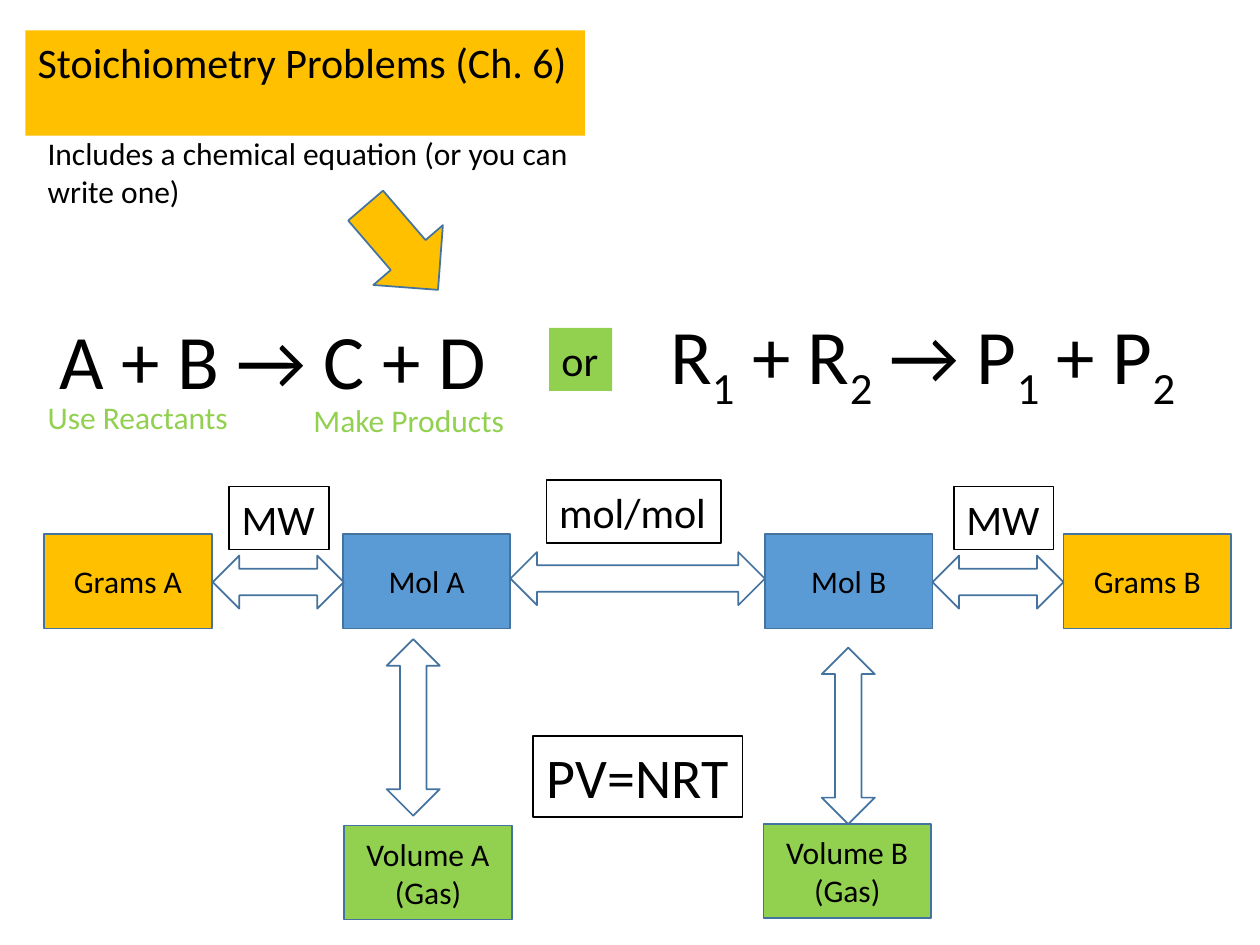
from pptx import Presentation
from pptx import util as u
from pptx.dml.color import RGBColor
from pptx.enum import shapes, text

FONT = "Calibri"
BLACK, WHITE = "000000", "FFFFFF"
GOLD, GREEN, BLUE, OUTLINE = "FFC000", "92D050", "5B9BD5", "43739E"
ARROW = shapes.MSO_SHAPE.LEFT_RIGHT_ARROW


def color(value):
    return RGBColor.from_string(value)


def write(shape, content, size=18, ink=BLACK, align="LEFT", anchor="TOP", wrap=False, grow=True):
    frame = shape.text_frame
    frame.word_wrap = wrap
    frame.auto_size = text.MSO_AUTO_SIZE.SHAPE_TO_FIT_TEXT if grow else text.MSO_AUTO_SIZE.NONE
    frame.vertical_anchor = text.MSO_ANCHOR[anchor]
    frame.margin_left = frame.margin_right = u.Cm(0.25)
    frame.margin_top = frame.margin_bottom = u.Cm(0.13)
    for index, line in enumerate(content.split("\n")):
        paragraph = frame.add_paragraph() if index else frame.paragraphs[0]
        paragraph.alignment = text.PP_ALIGN[align]
        paragraph.line_spacing = 1.0
        for position, part in enumerate(line.split("_")):
            pieces = [(part[:1], True), (part[1:], False)] if position else [(part, False)]
            for piece, lowered in pieces:
                if not piece:
                    continue
                run = paragraph.add_run()
                run.text = piece
                run.font.name = FONT
                run.font.size = u.Pt(size)
                run.font.color.rgb = color(ink)
                if lowered:
                    run.font._element.set("baseline", "-25000")


def add_box(slide, box, kind=shapes.MSO_SHAPE.RECTANGLE, fill=None, line=None, rotation=0):
    shape = slide.shapes.add_shape(kind, *map(u.Cm, box))
    shape.shadow.inherit = False
    shape.rotation = rotation
    if fill:
        shape.fill.solid()
        shape.fill.fore_color.rgb = color(fill)
    else:
        shape.fill.background()
    if line:
        shape.line.color.rgb = color(line)
        shape.line.width = u.Pt(1)
    else:
        shape.line.fill.background()
    return shape


def add_text(slide, box, content, **style):
    write(slide.shapes.add_textbox(*map(u.Cm, box)), content, **style)


def add_title(slide, box, content):
    title = slide.shapes.title
    title.left, title.top, title.width, title.height = map(u.Cm, box)
    title.fill.solid()
    title.fill.fore_color.rgb = color(GOLD)
    write(title, content, size=24)


def add_equations(slide, left, top):
    add_text(slide, (left, top, 11.51, 1.8),
             "Includes a chemical equation (or you can write one)", wrap=True)
    add_box(slide, (left + 6.27, top + 1.5, 2.24, 1.85),
            shapes.MSO_SHAPE.RIGHT_ARROW, GOLD, OUTLINE, 49.3)
    add_text(slide, (left + 0.25, top + 3.61, 9.19, 2.13), "A + B → C + D", size=44)
    add_text(slide, (left + 12.55, top + 3.51, 11.07, 2.13), "R_1 + R_2 → P_1 + P_2", size=44)
    write(add_box(slide, (left + 10.36, top + 4.04, 1.27, 1.27), fill=GREEN), "or", size=24)
    add_text(slide, (left, top + 5.33, 4.19, 1.02), "Use Reactants", ink=GREEN)
    add_text(slide, (left + 5.36, top + 5.38, 4.39, 1.02), "Make Products", ink=GREEN)


def add_conversion_map(slide, left, top):
    nodes = [
        ("Mol A", 6.02, 1.09, BLUE), ("Mol B", 14.53, 1.09, BLUE),
        ("Grams A", 0, 1.09, GOLD), ("Grams B", 20.55, 1.09, GOLD),
        ("Volume A\n(Gas)", 6.05, 6.96, GREEN), ("Volume B\n(Gas)", 14.5, 6.93, GREEN),
    ]
    for label, x, y, fill in nodes:
        node = add_box(slide, (left + x, top + y, 3.38, 1.9), fill=fill, line=OUTLINE)
        write(node, label, align="CENTER", anchor="MIDDLE", wrap=True, grow=False)

    arrows = [
        (9.4, 1.45, 5.13, 0), (3.4, 1.52, 2.64, 0), (17.91, 1.52, 2.64, 0),
        (5.66, 4.45, 3.56, 90), (14.43, 4.62, 3.56, 90),
    ]
    for x, y, length, rotation in arrows:
        add_box(slide, (left + x, top + y, length, 1.07), ARROW, line=OUTLINE, rotation=rotation)

    factors = [
        ("MW", 3.73, 0.13, 2.01, 1.27, 24), ("mol/mol", 10.13, 0, 3.51, 1.27, 24),
        ("MW", 18.34, 0.13, 2.01, 1.27, 24), ("PV=NRT", 9.86, 5.16, 4.22, 1.63, 32),
    ]
    for label, x, y, width, height, size in factors:
        factor = add_box(slide, (left + x, top + y, width, height), fill=WHITE, line=BLACK)
        write(factor, label, size=size, align="CENTER" if size == 32 else "LEFT")


def main():
    presentation = Presentation()
    presentation.slide_width, presentation.slide_height = u.Cm(25.4), u.Cm(19.05)
    slide = presentation.slides.add_slide(presentation.slide_layouts[5])
    add_conversion_map(slide, 0.89, 9.68)
    add_title(slide, (0.51, 0.61, 11.28, 1.27), "Stoichiometry Problems (Ch. 6)")
    add_equations(slide, 0.71, 2.57)
    presentation.save("out.pptx")


if __name__ == "__main__":
    main()
